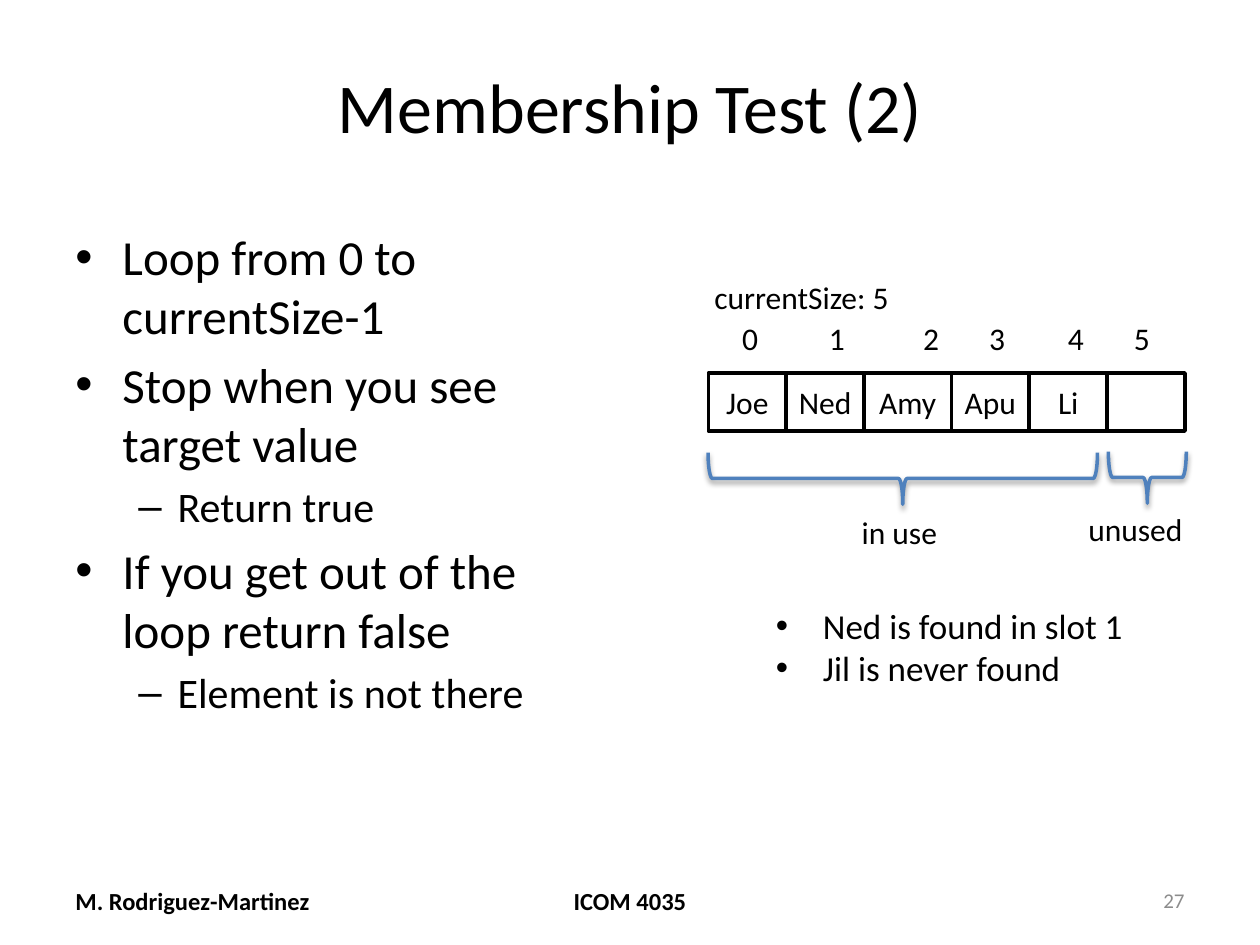
"""Build the slide on the membership test of an array-based collection."""
import lxml.etree
import pptx
import pptx.dml.color
import pptx.enum.shapes
import pptx.enum.text
import pptx.oxml
import pptx.oxml.ns
import pptx.util

Cm = pptx.util.Cm
Pt = pptx.util.Pt
RGBColor = pptx.dml.color.RGBColor
ALIGN = pptx.enum.text.PP_ALIGN
ANCHOR = pptx.enum.text.MSO_ANCHOR
SHAPE = pptx.enum.shapes.MSO_SHAPE
COLORS = {"text": "000000", "cell": "FFFFFF", "brace": "4F81BD", "number": "8C8C8C"}
SHADOW = (
    f'<a:effectLst {pptx.oxml.ns.nsdecls("a")}>'
    '<a:outerShdw blurRad="39370" dist="20320" dir="5400000" rotWithShape="0">'
    '<a:srgbClr val="000000"><a:alpha val="38000"/></a:srgbClr>'
    '</a:outerShdw></a:effectLst>'
)


def write(paragraph, text, size, color="text", bold=False, align=ALIGN.LEFT):
    """Add one run to a paragraph and format it."""
    paragraph.alignment = align
    run = paragraph.add_run()
    run.text = text
    run.font.name = "Calibri"
    run.font.size = Pt(size)
    run.font.bold = bold
    run.font.color.rgb = RGBColor.from_string(COLORS[color])


def add_text(box, lines, wrap=True, anchor=ANCHOR.TOP, **style):
    """Add a text box; each line is (text, size, bullet, indent, hanging, space before)."""
    frame = slide.shapes.add_textbox(*(Cm(length) for length in box)).text_frame
    frame.word_wrap = wrap
    frame.vertical_anchor = anchor
    for index, (text, size, bullet, indent, hanging, before) in enumerate(lines):
        paragraph = frame.add_paragraph() if index else frame.paragraphs[0]
        paragraph.space_before = Pt(before)
        write(paragraph, text, size, **style)
        if bullet:
            properties = paragraph._p.get_or_add_pPr()
            properties.set("marL", str(Cm(indent)))
            properties.set("indent", str(-Cm(hanging)))
            font = lxml.etree.SubElement(properties, pptx.oxml.ns.qn("a:buFont"))
            font.set("typeface", "Arial")
            mark = lxml.etree.SubElement(properties, pptx.oxml.ns.qn("a:buChar"))
            mark.set("char", bullet)
    return frame


presentation = pptx.Presentation()
presentation.slide_width = Cm(25.4)
presentation.slide_height = Cm(19.05)
slide = presentation.slides.add_slide(presentation.slide_layouts[6])

PLAIN = (None, 0, 0, 0)
add_text((1.27, 0.76, 22.86, 2.72), [("Membership Test (2)", 40, *PLAIN)],
         anchor=ANCHOR.MIDDLE, align=ALIGN.CENTER)

POINT = (28, "•", 0.95, 0.95, 5.6)
SUBPOINT = (24, "–", 2.06, 0.79, 4.8)
add_text((1.27, 4.45, 11.23, 12.57), [
    ("Loop from 0 to currentSize-1", *POINT),
    ("Stop when you see target value", *POINT),
    ("Return true", *SUBPOINT),
    ("If you get out of the loop return false", *POINT),
    ("Element is not there", *SUBPOINT),
])

footers = [
    (1.27, 5.93, "M. Rodriguez-Martinez", 14, "text", True, ALIGN.LEFT),
    (8.68, 8.04, "ICOM 4035", 14, "text", True, ALIGN.CENTER),
    (18.2, 5.93, "27", 12, "number", False, ALIGN.RIGHT),
]
for left, width, text, size, color, bold, align in footers:
    add_text((left, 17.65, width, 1.01), [(text, size, *PLAIN)],
             anchor=ANCHOR.MIDDLE, color=color, bold=bold, align=align)

left = 14.28
for name, width in [("Joe", 1.57), ("Ned", 1.57), ("Amy", 1.76),
                    ("Apu", 1.57), ("Li", 1.57), ("", 1.57)]:
    cell = slide.shapes.add_shape(SHAPE.RECTANGLE, Cm(left), Cm(7.52), Cm(width), Cm(1.17))
    cell.shadow.inherit = False
    cell.fill.solid()
    cell.fill.fore_color.rgb = RGBColor.from_string(COLORS["cell"])
    cell.line.color.rgb = RGBColor.from_string(COLORS["text"])
    cell.line.width = Pt(2)
    cell.text_frame.word_wrap = False
    cell.text_frame.vertical_anchor = ANCHOR.MIDDLE
    if name:
        write(cell.text_frame.paragraphs[0], name, 18, align=ALIGN.CENTER)
    left += width

indexes = add_text((14.71, 6.3, 8.84, 1.02), [("0\t1\t2\t3\t4\t5", 18, *PLAIN)])
tabs = lxml.etree.SubElement(indexes.paragraphs[0]._p.get_or_add_pPr(), pptx.oxml.ns.qn("a:tabLst"))
for position in (1.75, 3.65, 4.98, 6.57, 7.9):
    tab = lxml.etree.SubElement(tabs, pptx.oxml.ns.qn("a:tab"))
    tab.set("pos", str(Cm(position)))
    tab.set("algn", "l")

for left, top, length in [(22.61, 8.84, 1.57), (17.68, 5.72, 7.85)]:
    brace = slide.shapes.add_shape(SHAPE.LEFT_BRACE, Cm(left), Cm(top), Cm(1.04), Cm(length))
    brace.rotation = 270
    brace.fill.background()
    brace.line.color.rgb = RGBColor.from_string(COLORS["brace"])
    brace.line.width = Pt(2)
    brace._element.spPr.append(pptx.oxml.parse_xml(SHADOW))

for left, top, width, text in [(21.69, 10.16, 2.44, "unused"),
                               (17.12, 10.21, 2.06, "in use"),
                               (14.15, 5.49, 4.09, "currentSize: 5")]:
    add_text((left, top, width, 1.02), [(text, 18, *PLAIN)], wrap=False)

RESULT = (20, "•", 0.95, 0.95, 0)
add_text((15.39, 12.07, 7.57, 1.96),
         [("Ned is found in slot 1", *RESULT), ("Jil is never found", *RESULT)], wrap=False)

presentation.save("out.pptx")
